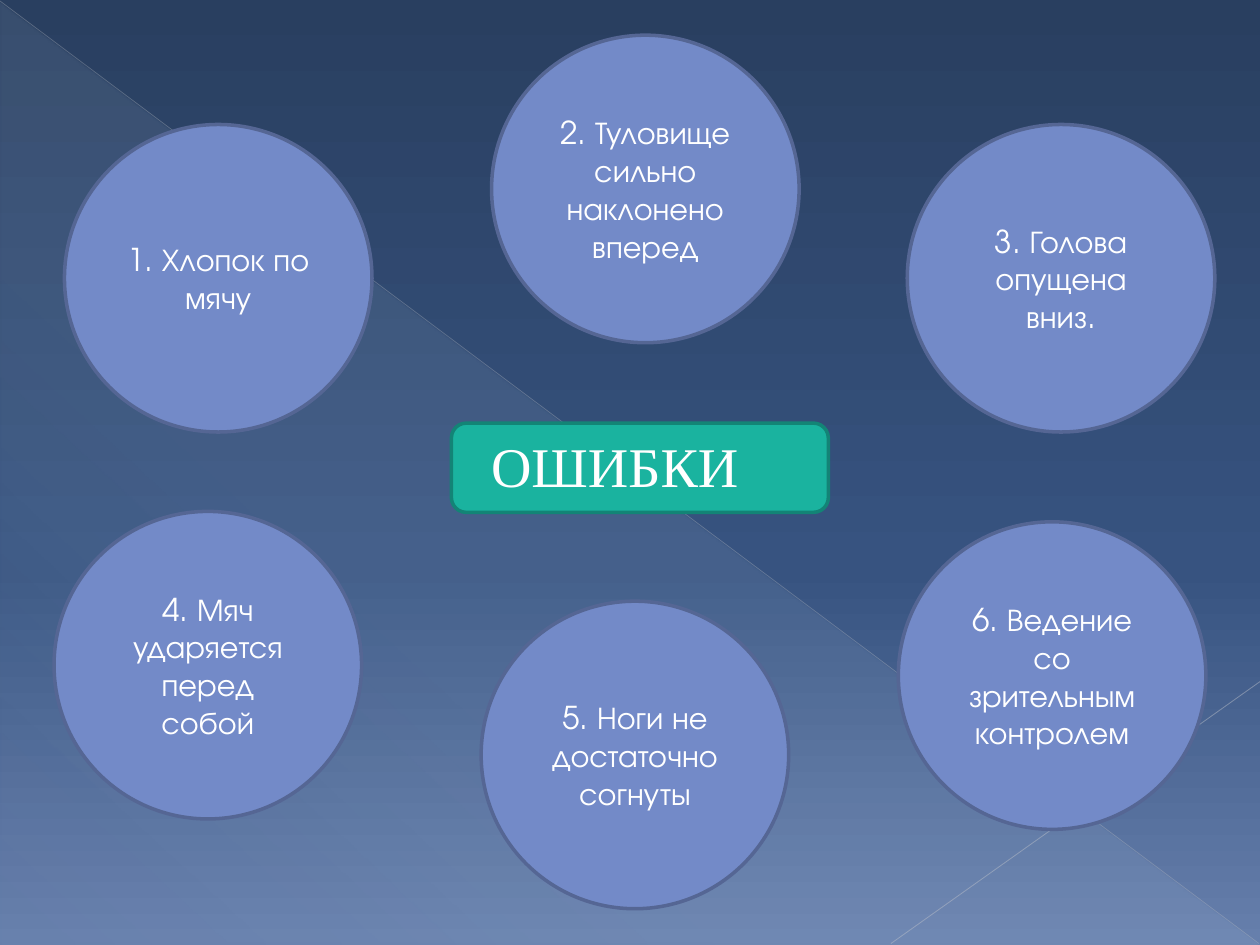
from lxml.etree import SubElement
from pptx import Presentation
from pptx.dml.color import RGBColor
from pptx.enum.shapes import MSO_CONNECTOR as CONNECTOR, MSO_SHAPE as SHAPE
from pptx.enum.text import MSO_ANCHOR as ANCHOR, PP_ALIGN as ALIGN
from pptx.oxml.ns import qn
from pptx.util import Cm, Pt

THEME = {
    "sky": [(0, "293F60", 100), (60, "375380", 100), (100, "667FAC", 100)],
    "glow": [(0, "D6ECFF", 10), (70, "D6ECFF", 8), (100, "D6ECFF", 1)],
    "circle": "738AC8",
    "circle_edge": "556694",
    "banner": "1AB39F",
    "banner_edge": "138476",
    "text": "FFFFFF",
    "body_font": "TeX Gyre Adventor",
    "title_font": "Times New Roman",
    "body_size": 18,
    "title_size": 32,
    "edge_width": 2,
}


def paint_gradient(fill, owner, stops, angle):
    fill.gradient()
    fill.gradient_angle = 360 - angle
    stop_list = owner.find(".//" + qn("a:gsLst"))
    for stop in list(stop_list):
        stop_list.remove(stop)
    for position, color, opacity in stops:
        stop = SubElement(stop_list, qn("a:gs"), pos=str(position * 1000))
        tint = SubElement(stop, qn("a:srgbClr"), val=color)
        if opacity < 100:
            SubElement(tint, qn("a:alpha"), val=str(opacity * 1000))


def write_centred(frame, words, font, size):
    frame.text = words
    frame.word_wrap = True
    frame.vertical_anchor = ANCHOR.MIDDLE
    paragraph = frame.paragraphs[0]
    paragraph.alignment = ALIGN.CENTER
    letters = paragraph.runs[0].font
    letters.name = font
    letters.size = Pt(size)
    letters.color.rgb = RGBColor.from_string(THEME["text"])


deck = Presentation()
deck.slide_width, deck.slide_height = Cm(25.4), Cm(19.05)
slide = deck.slides.add_slide(deck.slide_layouts[6])
shapes = slide.shapes
paint_gradient(slide.background.fill, slide.element, THEME["sky"], 90)

glow = shapes.add_shape(SHAPE.RIGHT_TRIANGLE, Cm(0.02), Cm(0.05), Cm(25.37), Cm(19))
glow.shadow.inherit = False
glow.line.fill.background()
paint_gradient(glow.fill, glow.element, THEME["glow"], 133)

rays = [
    (0, 0.02, 25.38, 19.02, "B7BCC5", 0.39, 35),
    (25.4, 13.74, 17.96, 19.02, "BFC3CB", 0.47, 45),
]
for x1, y1, x2, y2, color, width, opacity in rays:
    ray = shapes.add_connector(CONNECTOR.STRAIGHT, Cm(x1), Cm(y1), Cm(x2), Cm(y2))
    ray.line.color.rgb = RGBColor.from_string(color)
    ray.line.width = Pt(width)
    SubElement(ray.element.find(".//" + qn("a:srgbClr")), qn("a:alpha"), val=str(opacity * 1000))
    SubElement(ray.element.spPr, qn("a:effectLst"))

banner = shapes.add_shape(SHAPE.ROUNDED_RECTANGLE, Cm(9.1), Cm(8.53), Cm(7.6), Cm(1.8))
banner.shadow.inherit = False
banner.fill.solid()
banner.fill.fore_color.rgb = RGBColor.from_string(THEME["banner"])
banner.line.color.rgb = RGBColor.from_string(THEME["banner_edge"])
banner.line.width = Pt(THEME["edge_width"])

title = shapes.add_textbox(Cm(1.09), Cm(8.56), Cm(22.61), Cm(1.63))
write_centred(title.text_frame, "ОШИБКИ", THEME["title_font"], THEME["title_size"])

diameter = Cm(6.2)
mistakes = [
    ("1. Хлопок по мячу", 1.3, 2.51),
    ("2. Туловище сильно наклонено вперед", 9.91, 0.71),
    ("3. Голова опущена вниз.", 18.29, 2.51),
    ("4. Мяч ударяется перед собой", 1.09, 10.31),
    ("5. Ноги не достаточно согнуты", 9.7, 12.12),
    ("6. Ведение со зрительным контролем", 18.11, 10.52),
]
for words, left, top in mistakes:
    circle = shapes.add_shape(SHAPE.OVAL, Cm(left), Cm(top), diameter, diameter)
    circle.shadow.inherit = False
    circle.fill.solid()
    circle.fill.fore_color.rgb = RGBColor.from_string(THEME["circle"])
    circle.line.color.rgb = RGBColor.from_string(THEME["circle_edge"])
    circle.line.width = Pt(THEME["edge_width"])
    write_centred(circle.text_frame, words, THEME["body_font"], THEME["body_size"])

deck.save("out.pptx")
